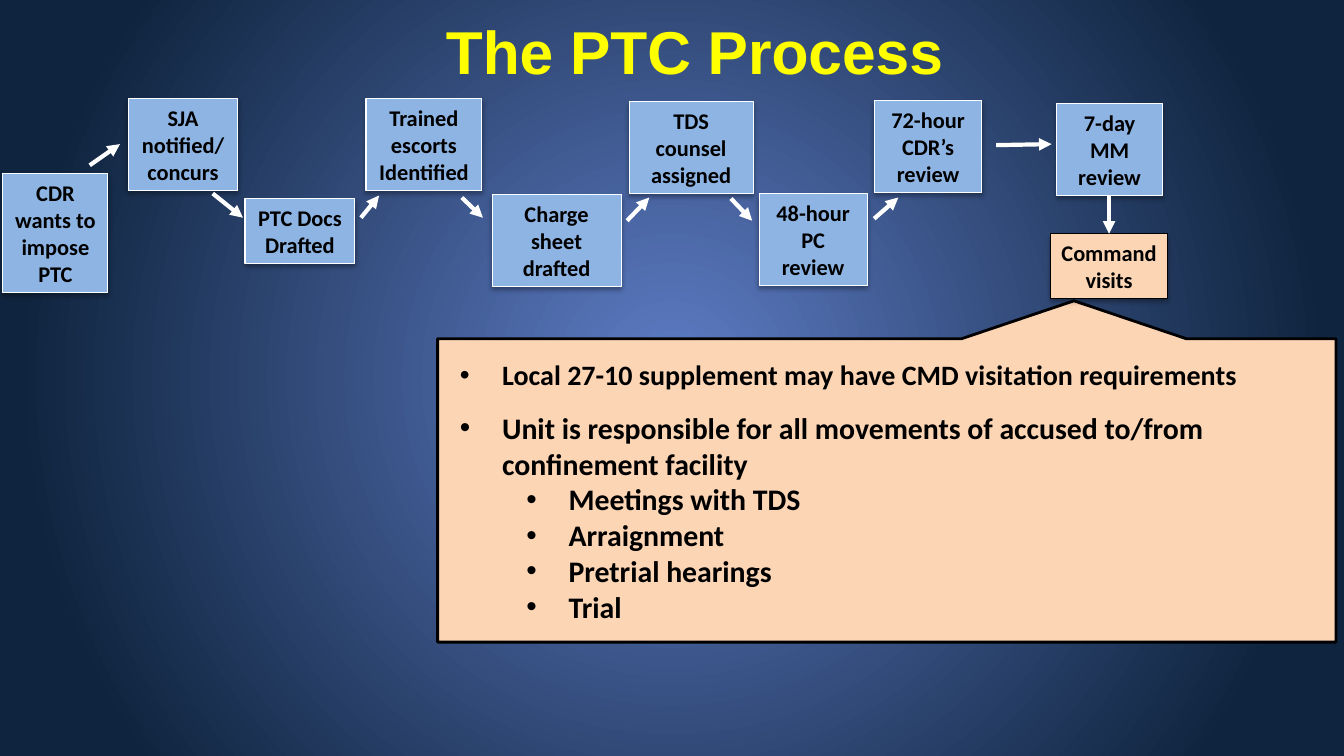
from lxml import etree
from pptx import Presentation
from pptx import util as u
from pptx.dml.color import RGBColor
from pptx.enum import shapes, text
from pptx.oxml.ns import qn

BLUE, PEACH, WHITE, BLACK = "8EB4E3", "FCD5B5", "FFFFFF", "000000"


def color(hex_value):
    return RGBColor.from_string(hex_value)


def style_font(font, **values):
    font.color.rgb = color(values.pop("rgb"))
    for name, value in values.items():
        setattr(font, name, value)


deck = Presentation()
deck.slide_width, deck.slide_height = u.Inches(13.33), u.Inches(7.5)
slide = deck.slides.add_slide(deck.slide_layouts[1])

# Background: round glow from the centre
glow = slide.background.fill
glow.gradient()
for stop, (position, shade) in zip(glow.gradient_stops, [(0, "5E7CC5"), (0.85, "0F243E")]):
    stop.position = position
    stop.color.rgb = color(shade)
gradient = next(slide.element.iter(qn("a:gradFill")))
gradient.remove(gradient.find(qn("a:lin")))
circle = etree.SubElement(gradient, qn("a:path"), path="circle")
etree.SubElement(circle, qn("a:fillToRect"), l="50000", t="50000", r="50000", b="50000")

# Title
title = slide.shapes.title
title.left, title.top, title.width, title.height = map(u.Inches, (0.77, 0.08, 12.24, 0.83))
title.text_frame.text = "The PTC Process"
title.text_frame.vertical_anchor = text.MSO_ANCHOR.MIDDLE
heading = title.text_frame.paragraphs[0]
heading.alignment = text.PP_ALIGN.CENTER
style_font(heading.font, name="Arial", size=u.Pt(43.2), bold=True, rgb="FFFF00")

# Callout pointing up at the command visits, behind its list
callout = slide.shapes.add_shape(shapes.MSO_SHAPE.RECTANGULAR_CALLOUT,
                                 *map(u.Inches, (4.34, 3.36, 8.91, 3.01)))
callout.rotation = 180
callout.shadow.inherit = False
callout.fill.solid()
callout.fill.fore_color.rgb = color(PEACH)
callout.line.color.rgb = color(BLACK)
callout.line.width = u.Pt(2)
title.element.addprevious(callout.element)

# Duties listed in the callout: level, size, space before, wording
duties = [
    (0, 20, 0, "Local 27-10 supplement may have CMD visitation requirements"),
    (0, 21.3, 13, "Unit is responsible for all movements of accused to/from confinement facility"),
    (1, 21.3, 0, "Meetings with TDS"),
    (1, 21.3, 0, "Arraignment"),
    (1, 21.3, 0, "Pretrial hearings"),
    (1, 21.3, 0, "Trial"),
]
duty_list = slide.placeholders[1]
duty_list.left, duty_list.top, duty_list.width, duty_list.height = map(
    u.Inches, (4.46, 3.5, 8.55, 2.77))
duty_frame = duty_list.text_frame
duty_frame.auto_size = text.MSO_AUTO_SIZE.NONE
duty_frame.vertical_anchor = text.MSO_ANCHOR.TOP
duty_frame.text = "\n".join(duty[3] for duty in duties)
for paragraph, (level, size, gap, _) in zip(duty_frame.paragraphs, duties):
    paragraph.level = level
    paragraph.space_before = u.Pt(gap)
    properties = paragraph._p.get_or_add_pPr()
    properties.set("marL", str(u.Inches((0.42, 1.08)[level])))
    properties.set("indent", str(u.Inches(-0.42)))
    etree.SubElement(properties, qn("a:buFont"), typeface="Arial")
    etree.SubElement(properties, qn("a:buChar"), char="•")
    style_font(paragraph.font, name="Calibri", size=u.Pt(size), bold=True, rgb=BLACK)

# Process steps: left, top, width, height, wording, fill, outline
steps = [
    (0.03, 1.72, 1.04, 1.18, "CDR wants to impose PTC", BLUE, WHITE),
    (1.27, 0.98, 1.09, 0.91, "SJA notified/ concurs", BLUE, WHITE),
    (2.43, 1.97, 1.09, 0.64, "PTC Docs\nDrafted", BLUE, WHITE),
    (3.63, 0.98, 1.15, 0.91, "Trained escorts Identified", BLUE, WHITE),
    (4.88, 1.93, 1.28, 0.91, "Charge sheet drafted", BLUE, WHITE),
    (6.24, 1.01, 1.23, 0.91, "TDS counsel assigned", BLUE, WHITE),
    (7.53, 1.92, 1.07, 0.91, "48-hour PC review", BLUE, WHITE),
    (8.67, 1.00, 1.07, 0.91, "72-hour CDR’s review", BLUE, WHITE),
    (10.48, 1.03, 1.05, 0.91, "7-day MM review", BLUE, WHITE),
    (10.42, 2.32, 1.16, 0.64, "Command visits", PEACH, BLACK),
]
for *place, wording, fill, outline in steps:
    step = slide.shapes.add_shape(shapes.MSO_SHAPE.RECTANGLE, *map(u.Inches, place))
    step.fill.solid()
    step.fill.fore_color.rgb = color(fill)
    step.line.color.rgb = color(outline)
    step.line.width = u.Pt(0.75)
    step.shadow.inherit = False
    shadow = etree.SubElement(step.element.spPr.find(qn("a:effectLst")), qn("a:outerShdw"),
                              blurRad=str(u.Pt(3.5)), dist=str(u.Pt(2.2)),
                              dir="5400000", rotWithShape="0")
    shade = etree.SubElement(shadow, qn("a:srgbClr"), val=BLACK)
    etree.SubElement(shade, qn("a:alpha"), val="32000")
    step.text_frame.word_wrap = True
    step.text_frame.auto_size = text.MSO_AUTO_SIZE.SHAPE_TO_FIT_TEXT
    step.text_frame.text = wording
    for paragraph in step.text_frame.paragraphs:
        paragraph.alignment = text.PP_ALIGN.CENTER
        style_font(paragraph.font, name="Calibri", size=u.Pt(16), bold=True, rgb=BLACK)

# Arrows from each step to the next: start x, y, end x, y
arrows = [
    (0.89, 1.64, 1.19, 1.43),
    (2.11, 1.92, 2.41, 2.16),
    (3.58, 2.16, 3.76, 1.94),
    (4.58, 1.96, 4.79, 2.16),
    (6.22, 2.19, 6.44, 1.96),
    (7.25, 1.97, 7.46, 2.19),
    (8.67, 2.17, 8.91, 1.96),
    (9.88, 1.44, 10.43, 1.43),
    (11, 1.94, 11, 2.32),
]
for ends in arrows:
    arrow = slide.shapes.add_connector(shapes.MSO_CONNECTOR.STRAIGHT, *map(u.Inches, ends))
    arrow.line.color.rgb = color(WHITE)
    arrow.line.width = u.Pt(3)
    etree.SubElement(arrow.line._get_or_add_ln(), qn("a:tailEnd"), type="triangle")
    etree.SubElement(arrow.element.spPr, qn("a:effectLst"))

deck.save("out.pptx")
